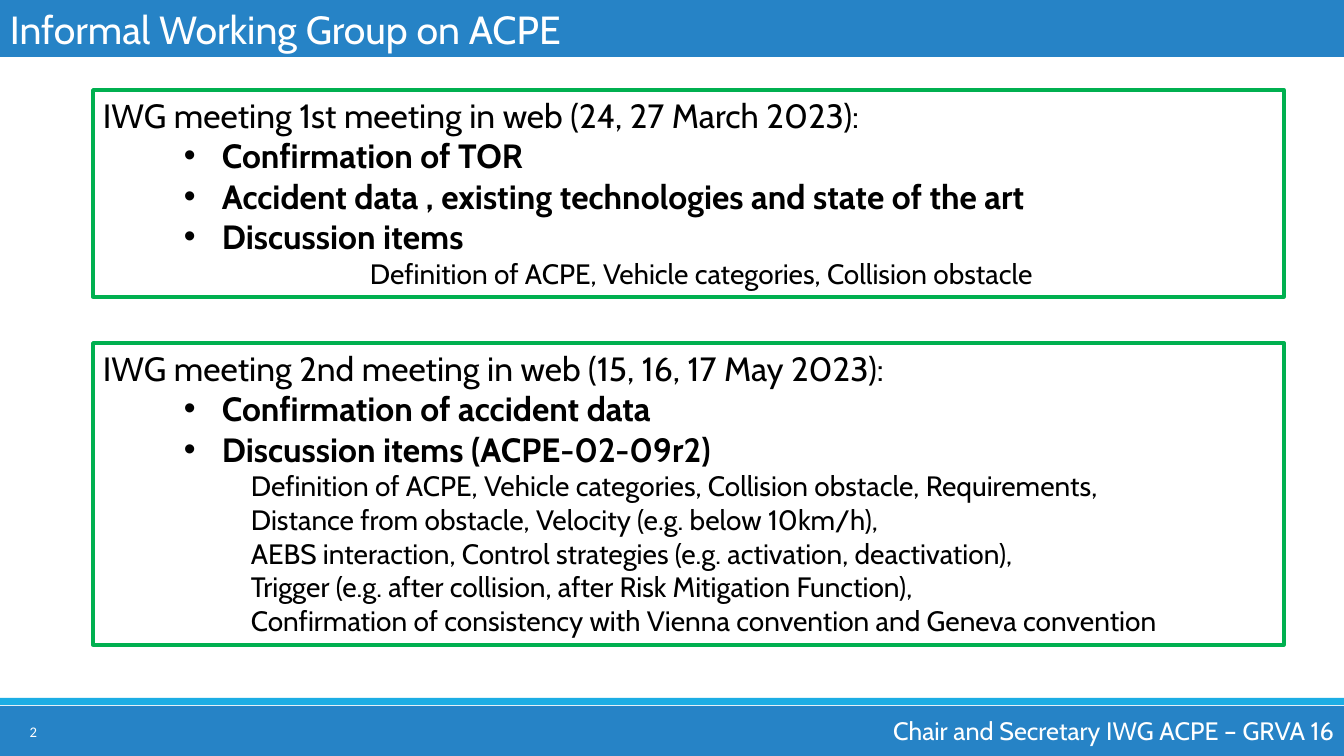
from dataclasses import dataclass

from lxml.etree import SubElement
from pptx import Presentation
from pptx.dml.color import RGBColor
from pptx.enum.shapes import MSO_SHAPE as Preset
from pptx.enum.text import MSO_ANCHOR as Anchor, PP_ALIGN as Align
from pptx.oxml.ns import qn
from pptx.util import Pt

EMU_PER_PX = 914400 / 100.8


def px(length):
    return round(length * EMU_PER_PX)


@dataclass(frozen=True)
class Theme:
    bar: str = "2683C6"
    stripe: str = "1CADE4"
    frame: str = "00B050"
    ink: str = "000000"
    light: str = "FFFFFF"
    font: str = "Cabin"
    number_font: str = "Calibri"
    title_size: float = 28
    heading_size: float = 24
    detail_size: float = 20
    footer_size: float = 18
    number_size: float = 10.5
    frame_width: float = 2.5


class PageBuilder:
    def __init__(self, page, theme):
        self.page = page
        self.theme = theme

    def rectangle(self, left, top, width, height, fill=None, line=None):
        shape = self.page.shapes.add_shape(
            Preset.RECTANGLE, px(left), px(top), px(width), px(height))
        shape.shadow.inherit = False
        if fill:
            shape.fill.solid()
            shape.fill.fore_color.rgb = RGBColor.from_string(fill)
        else:
            shape.fill.background()
        if line:
            shape.line.color.rgb = RGBColor.from_string(line)
            shape.line.width = Pt(self.theme.frame_width)
        else:
            shape.line.fill.background()
        shape.text_frame.word_wrap = True
        shape.text_frame.vertical_anchor = Anchor.TOP
        return shape

    def paragraph(self, para, text, size, color, font=None, bold=False,
                  align=Align.LEFT, indent=0, hanging=0):
        para.text = text
        para.alignment = align
        properties = para._p.get_or_add_pPr()
        properties.set("marL", str(px(indent)))
        properties.set("indent", str(-px(hanging)))
        if hanging:
            SubElement(properties, qn("a:buFont"), typeface="Arial")
            SubElement(properties, qn("a:buChar"), char="•")
        para.font.name = font or self.theme.font
        para.font.size = Pt(size)
        para.font.bold = bold
        para.font.color.rgb = RGBColor.from_string(color)

    def label(self, left, top, width, height, text, size, font=None):
        box = self.page.shapes.add_textbox(
            px(left), px(top), px(width), px(height))
        box.text_frame.word_wrap = True
        box.text_frame.vertical_anchor = Anchor.MIDDLE
        self.paragraph(box.text_frame.paragraphs[0], text, size,
                       self.theme.light, font, align=Align.RIGHT)

    def title(self, text):
        bar = self.rectangle(0, 0, 1344, 57, fill=self.theme.bar)
        self.paragraph(bar.text_frame.paragraphs[0], text,
                       self.theme.title_size, self.theme.light)

    def meeting(self, top, height, heading, topics, details, detail_indent):
        theme = self.theme
        frame = self.rectangle(93, top, 1191, height, line=theme.frame).text_frame
        self.paragraph(frame.paragraphs[0], heading, theme.heading_size, theme.ink)
        for topic in topics:
            self.paragraph(frame.add_paragraph(), topic, theme.heading_size,
                           theme.ink, bold=True, indent=119, hanging=38)
        for detail in details:
            self.paragraph(frame.add_paragraph(), detail, theme.detail_size,
                           theme.ink, indent=detail_indent)


def main():
    deck = Presentation()
    deck.slide_width, deck.slide_height = px(1344), px(756)
    theme = Theme()
    builder = PageBuilder(deck.slides.add_slide(deck.slide_layouts[6]), theme)

    builder.rectangle(0, 706, 1344, 50, fill=theme.bar)
    builder.rectangle(0, 698, 1344, 7, fill=theme.stripe)
    builder.label(0, 712, 47, 40, "2", theme.number_size, theme.number_font)
    builder.title("Informal Working Group on ACPE")
    builder.label(849, 710, 495, 40, "Chair and Secretary IWG ACPE – GRVA 16",
                  theme.footer_size)
    builder.meeting(
        90, 207, "IWG meeting 1st meeting in web (24, 27 March 2023):",
        ["Confirmation of TOR",
         "Accident data , existing technologies and state of the art",
         "Discussion items"],
        ["Definition of ACPE, Vehicle categories, Collision obstacle"],
        detail_indent=267)
    builder.meeting(
        343, 302, "IWG meeting 2nd meeting in web (15, 16, 17 May 2023):",
        ["Confirmation of accident data", "Discussion items (ACPE-02-09r2)"],
        ["Definition of ACPE, Vehicle categories, Collision obstacle, Requirements,",
         "Distance from obstacle, Velocity (e.g. below 10km/h),",
         "AEBS interaction, Control strategies (e.g. activation, deactivation),",
         "Trigger (e.g. after collision, after Risk Mitigation Function),",
         "Confirmation of consistency with Vienna convention and Geneva convention"],
        detail_indent=148)
    deck.save("out.pptx")


if __name__ == "__main__":
    main()
